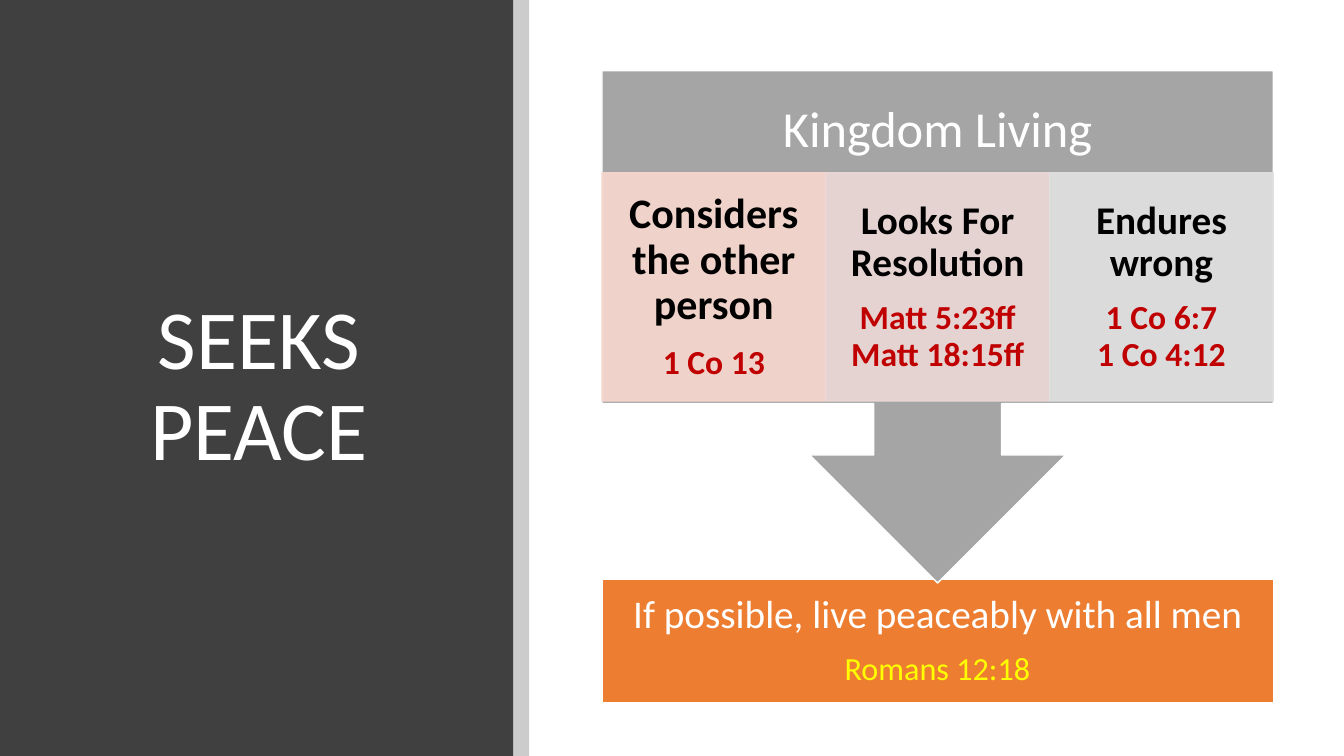
from pptx import Presentation
from pptx.dml.color import RGBColor
from pptx.enum import shapes, text
from pptx.oxml.ns import qn
from pptx.util import Pt
from lxml import etree

COLORS = {
    "white": "FFFFFF", "black": "000000", "panel": "404040",
    "gray": "A5A5A5", "orange": "ED7D31", "red": "C00000",
    "yellow": "FFFF00", "rose": "F8D7CE", "mauve": "EDD9D7",
    "silver": "E1E1E1",
}
LEFT, WIDTH = 430, 479.5
CARD = WIDTH / 3


def block(kind, box, fill, line=None, alpha=100):
    shape = slide.shapes.add_shape(kind, *[Pt(v) for v in box])
    shape.shadow.inherit = False
    shape.fill.solid()
    shape.fill.fore_color.rgb = RGBColor.from_string(COLORS[fill])
    if line:
        shape.line.color.rgb = RGBColor.from_string(COLORS[line])
        shape.line.width = Pt(1)
    else:
        shape.line.fill.background()
    if alpha < 100:
        for color in shape._element.spPr.iter(qn("a:srgbClr")):
            etree.SubElement(color, qn("a:alpha")).set("val", str(alpha * 1000))
    return shape


def write(shape, rows, pads, bold=False):
    frame = shape.text_frame
    frame.word_wrap = True
    frame.auto_size = text.MSO_AUTO_SIZE.NONE
    frame.vertical_anchor = text.MSO_ANCHOR.MIDDLE
    frame.margin_left = frame.margin_right = Pt(pads[0])
    frame.margin_top, frame.margin_bottom = Pt(pads[1]), Pt(pads[2])
    for i, (words, size, color, after) in enumerate(rows):
        para = frame.add_paragraph() if i else frame.paragraphs[0]
        para.alignment = text.PP_ALIGN.CENTER
        para.line_spacing = 0.9
        para.space_before = Pt(0)
        para.space_after = Pt(after)
        run = para.add_run()
        run.text = words
        run.font.name = "Calibri"
        run.font.size = Pt(size)
        run.font.bold = bold
        run.font.color.rgb = RGBColor.from_string(COLORS[color])


deck = Presentation()
deck.slide_width, deck.slide_height = Pt(960), Pt(540)
slide = deck.slides.add_slide(deck.slide_layouts[5])
rect = shapes.MSO_SHAPE.RECTANGLE

panel = block(rect, (0, 0, 366.5, 540), "panel")
title = slide.shapes.title
panel._element.addnext(title._element)
title.left, title.top = Pt(25), Pt(64)
title.width, title.height = Pt(320), Pt(425.5)
write(title, [("SEEKS PEACE", 60, "white", 0)], (7.2, 3.6, 3.6))
block(rect, (366.5, 0, 11.5, 540), "black", alpha=20)

goal = block(rect, (LEFT, 413.5, WIDTH, 88.5), "orange", "white")
write(goal, [
    ("If possible, live peaceably with all men", 28, "white", 11),
    ("Romans 12:18", 23, "yellow", 0),
], (16, 16, 16))

arrow = block(shapes.MSO_SHAPE.UP_ARROW_CALLOUT,
              (LEFT, 50.5, WIDTH, 366), "gray", "white")
arrow.rotation = 180
head = slide.shapes.add_textbox(Pt(LEFT), Pt(50.5), Pt(WIDTH), Pt(128))
write(head, [("Kingdom Living", 36, "white", 0)], (20, 20, 62))

cards = [
    ("rose", "Considers the other person", 30, ["1 Co 13"]),
    ("mauve", "Looks For Resolution", 28, ["Matt 5:23ff", "Matt 18:15ff"]),
    ("silver", "Endures wrong", 28, ["1 Co 6:7", "1 Co 4:12"]),
]
for i, (fill, name, size, verses) in enumerate(cards):
    card = block(rect, (LEFT + i * CARD, 123.5, CARD, 163), fill, fill, 90)
    rows = [(name, size, "black", size * 0.4)]
    rows += [(verse, 24, "red", 0) for verse in verses]
    write(card, rows, (16, 3, 3), True)

deck.save("out.pptx")
